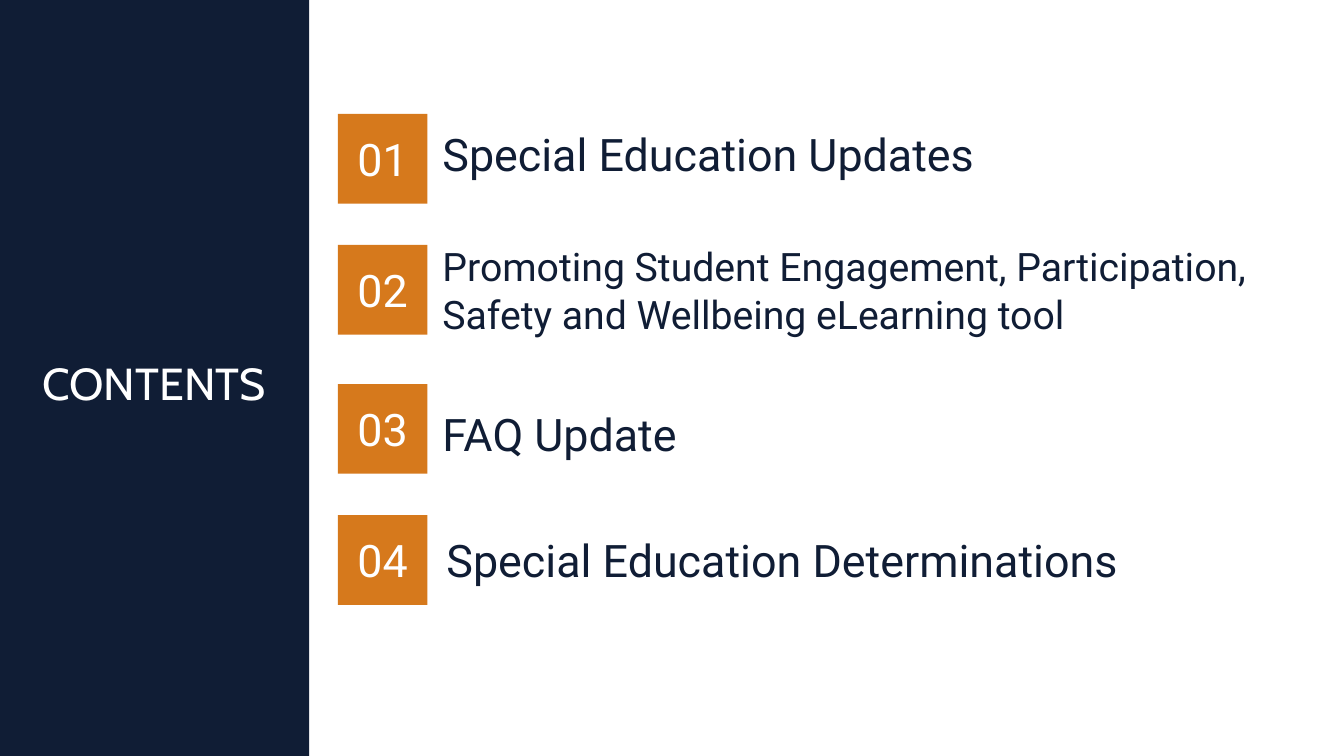
from pptx import Presentation
from pptx.dml.color import RGBColor
from pptx.enum.shapes import MSO_SHAPE
from pptx.enum.text import MSO_ANCHOR, PP_ALIGN
from pptx.util import Inches, Pt

COLORS = {"navy": "101D35", "orange": "D6791C", "white": "FFFFFF"}
SLIDE_W, SLIDE_H = 13.33, 7.5
PANEL_W = 0.23 * SLIDE_W
BADGE = 0.89
ROW_LEFT, ROW_W = 3.35, 9.67

# Row top, label shift right and down within the row, size, text
ITEMS = [
    (1.13, 0, -0.05, 32, "Special Education Updates"),
    (2.43, 0, 0, 28, "Promoting Student Engagement, Participation, "
                     "Safety and Wellbeing eLearning tool"),
    (3.81, 0, 0.05, 32, "FAQ Update"),
    (5.11, 0.04, 0, 32, "Special Education Determinations"),
]


def color(name):
    return RGBColor.from_string(COLORS[name])


def add_rect(s, x, y, w, h, fill):
    sp = s.shapes.add_shape(MSO_SHAPE.RECTANGLE, Inches(x), Inches(y), Inches(w), Inches(h))
    sp.shadow.inherit = False
    sp.fill.solid()
    sp.fill.fore_color.rgb = color(fill)
    sp.line.fill.background()
    return sp


def write(sp, text, size, ink, font="Roboto", align=PP_ALIGN.LEFT):
    tf = sp.text_frame
    tf.text = text
    tf.word_wrap = True
    tf.vertical_anchor = MSO_ANCHOR.MIDDLE
    p = tf.paragraphs[0]
    p.alignment = align
    f = p.runs[0].font
    f.name, f.size, f.color.rgb = font, Pt(size), color(ink)
    return p


def add_title_panel(s, x, y, w, h):
    panel = add_rect(s, x, y, w, h, "navy")
    title = s.shapes.title
    panel.element.addnext(title.element)  # title in front of the panel
    title.left, title.top = Inches(x + 0.32), Inches(y + 3.1)
    title.width, title.height = Inches(w - 0.31), Inches(1.45)
    p = write(title, "CONTENTS", 32, "white", "Cabin")
    p.line_spacing = 0.9


def add_item(s, x, y, w, h, number, dx, dy, size, text):
    """Numbered square with its label to the right."""
    badge = add_rect(s, x, y, h, h, "orange")
    write(badge, f"{number:02d}", 32, "white", align=PP_ALIGN.CENTER)
    label_x = h + 0.05 + dx
    label = s.shapes.add_textbox(Inches(x + label_x), Inches(y + dy),
                                 Inches(w - label_x), Inches(h))
    write(label, text, size, "navy")


def main():
    prs = Presentation()
    prs.slide_width, prs.slide_height = Inches(SLIDE_W), Inches(SLIDE_H)
    s = prs.slides.add_slide(prs.slide_layouts[5])
    add_title_panel(s, 0, 0, PANEL_W, SLIDE_H)
    for number, (top, *label) in enumerate(ITEMS, 1):
        add_item(s, ROW_LEFT, top, ROW_W, BADGE, number, *label)
    prs.save("out.pptx")


if __name__ == "__main__":
    main()
